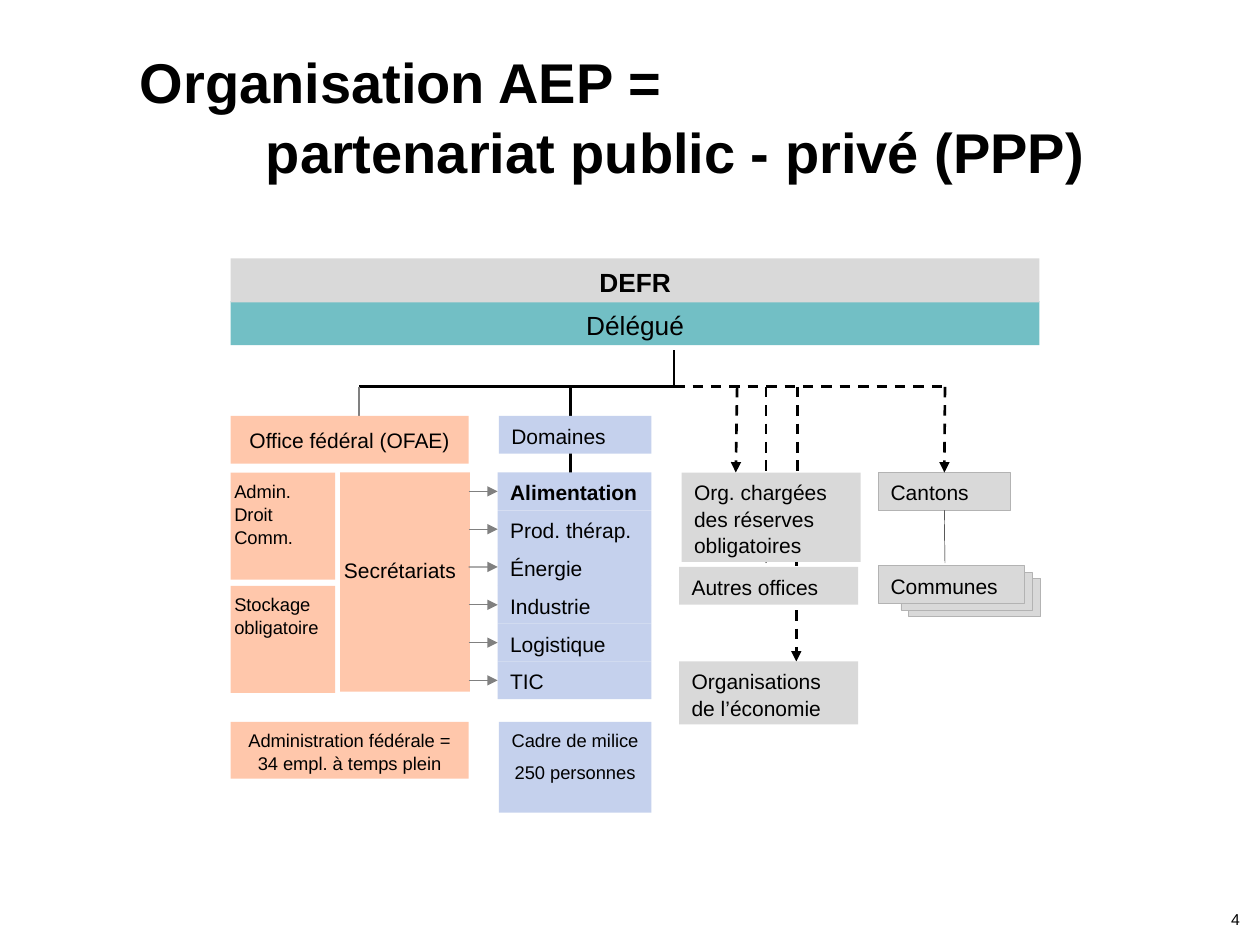
import pptx
import pptx.util
import pptx.dml.color
import pptx.enum.dml
import pptx.enum.shapes
import pptx.enum.text
import lxml.etree

Inches, Pt = pptx.util.Inches, pptx.util.Pt
ALIGN = pptx.enum.text.PP_ALIGN
ANCHOR = pptx.enum.text.MSO_ANCHOR
NS = "{http://schemas.openxmlformats.org/drawingml/2006/main}"

COLORS = {"black": "000000", "grey": "D9D9D9", "edge": "B3B3B3", "teal": "72BFC5",
          "orange": "FFC7AB", "blue": "C5D1ED", "arrow": "808080"}

TITLE = "Organisation AEP =\v\t\tpartenariat public - privé (PPP)"
DOMAINS = ["Alimentation", "Prod. thérap.", "Énergie", "Industrie", "Logistique", "TIC"]
ROW_TOP, ROW_HEIGHT, BUS = 3.75, 0.3, 3.07
DOMAIN_LEFT, DOMAIN_WIDTH, OFFICE_RIGHT = 3.95, 1.22, 3.72

# start, end, format
LINES = [
    ((6.08, 4.12), (6.08, 4.47), dict(dash=True, arrow=True)),
    ((6.08, BUS), (6.08, ROW_TOP), dict(dash=True)),
    ((6.32, 4.55), (6.32, 5.25), dict(dash=True, arrow=True)),
    ((6.32, 4.12), (6.32, 4.55), dict(dash=True)),
    ((6.33, BUS), (6.33, ROW_TOP), dict(dash=True)),
    ((5.85, BUS), (5.84, ROW_TOP), dict(dash=True, arrow=True)),
    ((5.35, BUS), (7.5, BUS), dict(dash=True)),
    ((5.35, BUS), (2.85, BUS), {}),
    ((5.35, 2.78), (5.35, BUS), {}),
    ((2.85, BUS), (2.85, 3.3), dict(color="arrow")),
    ((4.53, BUS), (4.53, 3.81), {}),
]

SMALL = dict(size=10.5)
SIDE = dict(size=10.5, margin=0.03)
CENTRED = dict(align=ALIGN.CENTER)
# text, (left, top, width, height), fill, format
BOXES = [
    ("Délégué", (1.83, 2.39, 6.42, 0.35), "teal", dict(CENTRED, size=15)),
    ("DEFR", (1.83, 2.05, 6.42, 0.35), "grey", dict(CENTRED, size=15, bold=True)),
    ("Office fédéral (OFAE)", (1.83, 3.3, 1.89, 0.38), "orange",
     dict(CENTRED, anchor=ANCHOR.MIDDLE)),
    ("Admin.\vDroit\vComm.", (1.83, 3.75, 0.83, 0.85), "orange", SIDE),
    ("Stockage obligatoire", (1.83, 4.65, 0.83, 0.85), "orange", SIDE),
    ("Secrétariats", (2.7, 3.75, 1.03, 1.74), "orange",
     dict(margin=0.03, bottom=0.25, anchor=ANCHOR.MIDDLE)),
    ("Administration fédérale = 34 empl. à temps plein", (1.83, 5.73, 1.89, 0.45),
     "orange", dict(SMALL, **CENTRED)),
    ("Domaines", (3.96, 3.3, 1.21, 0.3), "blue", {}),
    ("Cadre de milice\n250 personnes", (3.96, 5.73, 1.21, 0.72), "blue",
     dict(SMALL, **CENTRED)),
    ("Org. chargées des réserves obligatoires", (5.41, 3.75, 1.42, 0.71), "grey", {}),
    ("Autres offices", (5.39, 4.5, 1.42, 0.3), "grey", {}),
    ("Organisations de l’économie", (5.39, 5.25, 1.42, 0.5), "grey", {}),
]
OUTLINED_BOXES = [
    ("Cantons", (6.97, 3.75, 1.05, 0.3)),
    ("", (7.21, 4.59, 1.05, 0.3)),
    ("", (7.15, 4.54, 1.04, 0.3)),
    ("Communes", (6.97, 4.49, 1.16, 0.3)),
]


def rgb(name):
    return pptx.dml.color.RGBColor.from_string(COLORS[name])


def write(shape, text, size=12, bold=False, align=ALIGN.LEFT, anchor=ANCHOR.TOP,
          margin=0.1, top=0.05, bottom=0.05):
    frame = shape.text_frame
    frame.word_wrap = True
    frame.vertical_anchor = anchor
    frame.margin_left = frame.margin_right = Inches(margin)
    frame.margin_top, frame.margin_bottom = Inches(top), Inches(bottom)
    frame.text = text
    for index, para in enumerate(frame.paragraphs):
        para.alignment = align
        para.line_spacing = 1.05
        para.space_before = Pt(size / 2 if index else 0)
        for span in para.runs:
            span.font.name = "Arial"
            span.font.size = Pt(size)
            span.font.bold = bold
            span.font.color.rgb = rgb("black")


def add_box(page, text, area, fill, edge=None, **style):
    box = page.shapes.add_shape(pptx.enum.shapes.MSO_SHAPE.RECTANGLE,
                                *(Inches(length) for length in area))
    box.shadow.inherit = False
    box.fill.solid()
    box.fill.fore_color.rgb = rgb(fill)
    if edge:
        box.line.color.rgb = rgb(edge)
        box.line.width = Pt(0.25)
    else:
        box.line.fill.background()
    if text:
        write(box, text, **style)
    return box


def add_line(page, start, end, color="black", width=1.5, dash=False, arrow=False):
    line = page.shapes.add_connector(pptx.enum.shapes.MSO_CONNECTOR.STRAIGHT,
                                     *(Inches(length) for length in start + end))
    line.line.color.rgb = rgb(color)
    line.line.width = Pt(width)
    if dash:
        line.line.dash_style = pptx.enum.dml.MSO_LINE.DASH
    if arrow:
        lxml.etree.SubElement(line.line._get_or_add_ln(), NS + "tailEnd", type="triangle")
    lxml.etree.SubElement(line._element.spPr, NS + "effectLst")
    return line


def add_text(page, text, area, **style):
    box = page.shapes.add_textbox(*(Inches(length) for length in area))
    write(box, text, margin=0, top=0, bottom=0, **style)


def main():
    deck = pptx.Presentation()
    deck.slide_width, deck.slide_height = Inches(10), Inches(7.5)
    page = deck.slides.add_slide(deck.slide_layouts[6])

    add_text(page, TITLE, (1.11, 0.35, 8.89, 0.59), size=32, bold=True)
    add_text(page, "4", (7.36, 7.21, 2.48, 0.16), size=9, align=ALIGN.RIGHT)

    for start, end, style in LINES:
        add_line(page, start, end, **style)
    for text, area, fill, style in BOXES:
        add_box(page, text, area, fill, **style)

    for index, domain in enumerate(DOMAINS):
        top = ROW_TOP + index * ROW_HEIGHT
        middle = top + ROW_HEIGHT / 2
        row = add_box(page, domain, (DOMAIN_LEFT, top, DOMAIN_WIDTH, ROW_HEIGHT),
                      "blue", bold=index == 0)
        arrow = add_line(page, (OFFICE_RIGHT, middle), (DOMAIN_LEFT, middle),
                         color="arrow", width=0.75, arrow=True)
        arrow.end_connect(row, 1)

    cantons, *_ = [add_box(page, text, area, "grey", edge="edge")
                   for text, area in OUTLINED_BOXES]
    add_line(page, (7.5, BUS), (7.5, ROW_TOP), dash=True, arrow=True).end_connect(cantons, 0)
    add_line(page, (7.5, 4.05), (7.5, 4.47), width=0.25).begin_connect(cantons, 2)

    deck.save("out.pptx")


if __name__ == "__main__":
    main()
